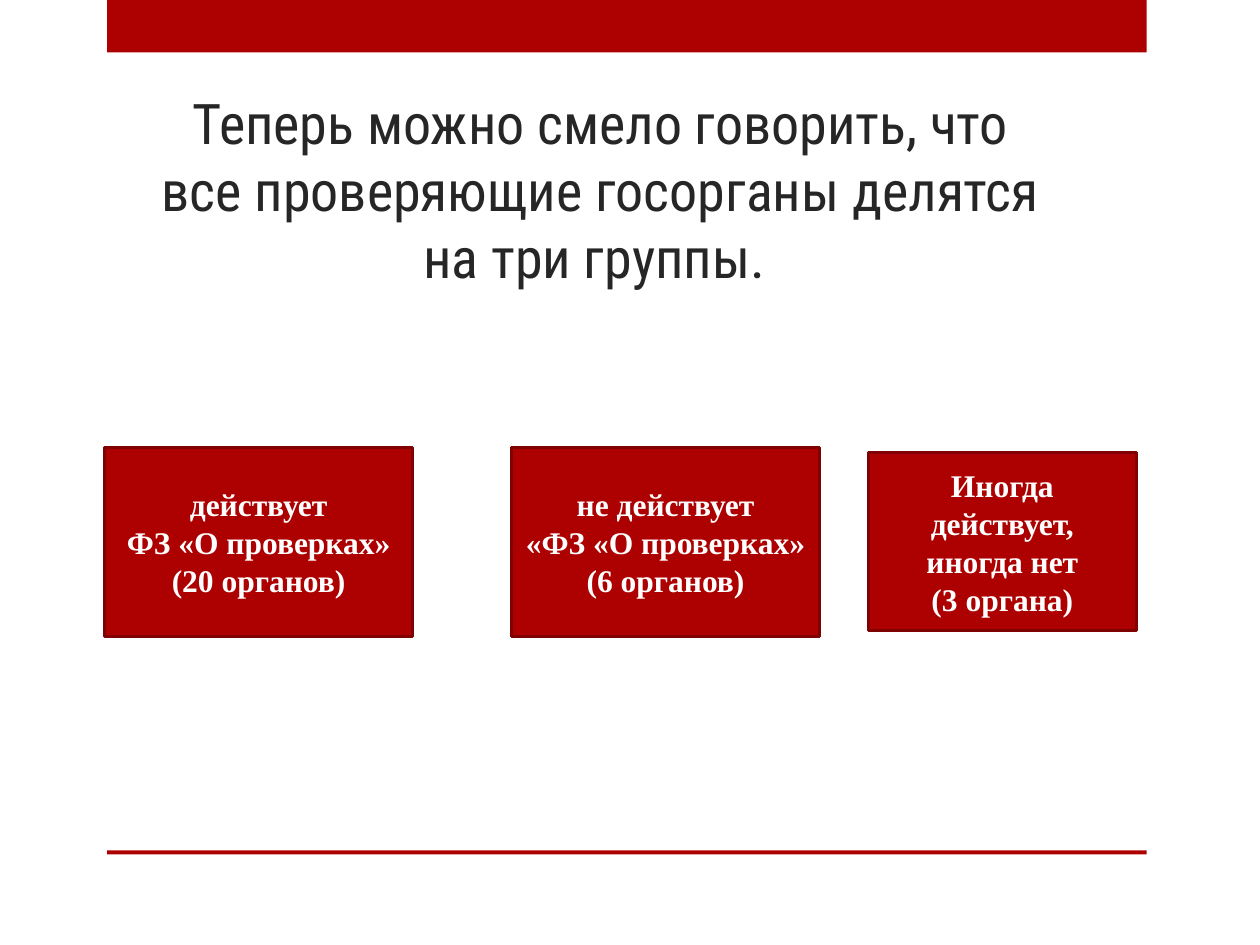
from pptx import Presentation
from pptx.dml.color import RGBColor
from pptx.enum.shapes import MSO_SHAPE
from pptx.enum.text import MSO_ANCHOR, MSO_AUTO_SIZE, PP_ALIGN
from pptx.util import Pt

RED = RGBColor(0xAD, 0x01, 0x01)
DARK_RED = RGBColor(0x80, 0x01, 0x01)
CHARCOAL = RGBColor(0x26, 0x26, 0x26)
WHITE = RGBColor(0xFF, 0xFF, 0xFF)


class SlideBuilder:
    title_font = "Roboto Condensed"
    box_font = "Times New Roman"

    def __init__(self, slide):
        self.slide = slide

    def set_text(self, text_frame, text, anchor, font_name, size, color, bold=False):
        text_frame.text = text
        text_frame.word_wrap = True
        text_frame.auto_size = MSO_AUTO_SIZE.NONE
        text_frame.vertical_anchor = anchor
        for paragraph in text_frame.paragraphs:
            paragraph.alignment = PP_ALIGN.CENTER
            for run in paragraph.runs:
                run.font.name = font_name
                run.font.size = Pt(size)
                run.font.bold = bold
                run.font.color.rgb = color

    def title(self, text, left, top, width, height):
        shape = self.slide.shapes.title
        shape.left, shape.top = Pt(left), Pt(top)
        shape.width, shape.height = Pt(width), Pt(height)
        self.set_text(shape.text_frame, text, MSO_ANCHOR.BOTTOM,
                      self.title_font, 32, CHARCOAL)

    def bar(self, left, top, width, height):
        shape = self.slide.shapes.add_shape(
            MSO_SHAPE.RECTANGLE, Pt(left), Pt(top), Pt(width), Pt(height))
        shape.shadow.inherit = False
        shape.fill.solid()
        shape.fill.fore_color.rgb = RED
        shape.line.fill.background()
        return shape

    def box(self, text, left, top, width, height):
        shape = self.bar(left, top, width, height)
        shape.line.color.rgb = DARK_RED
        shape.line.width = Pt(1.75)
        self.set_text(shape.text_frame, text, MSO_ANCHOR.MIDDLE,
                      self.box_font, 18, WHITE, bold=True)


def main():
    presentation = Presentation()
    presentation.slide_width, presentation.slide_height = Pt(720), Pt(540)
    title_only = presentation.slide_layouts[5]
    builder = SlideBuilder(presentation.slides.add_slide(title_only))

    # Bars at the top and bottom
    for top, height in ((0, 30), (486, 2.2)):
        builder.bar(61.2, top, 594, height)

    # Heading
    builder.title("Теперь можно смело говорить, что все проверяющие госорганы "
                  "делятся на три группы. ", 76.3, 43.2, 534.2, 126)

    # Three groups, centred on one horizontal axis
    axis = 309.6
    groups = (
        ("действует\nФЗ «О проверках»\n(20 органов)", 59.8, 176, 108),
        ("не действует\n«ФЗ «О проверках»\n(6 органов)", 292.3, 176, 108),
        ("Иногда действует,\nиногда нет\n(3 органа)", 496.1, 153.4, 102),
    )
    for text, left, width, height in groups:
        builder.box(text, left, axis - height / 2, width, height)

    presentation.save("out.pptx")


if __name__ == "__main__":
    main()
